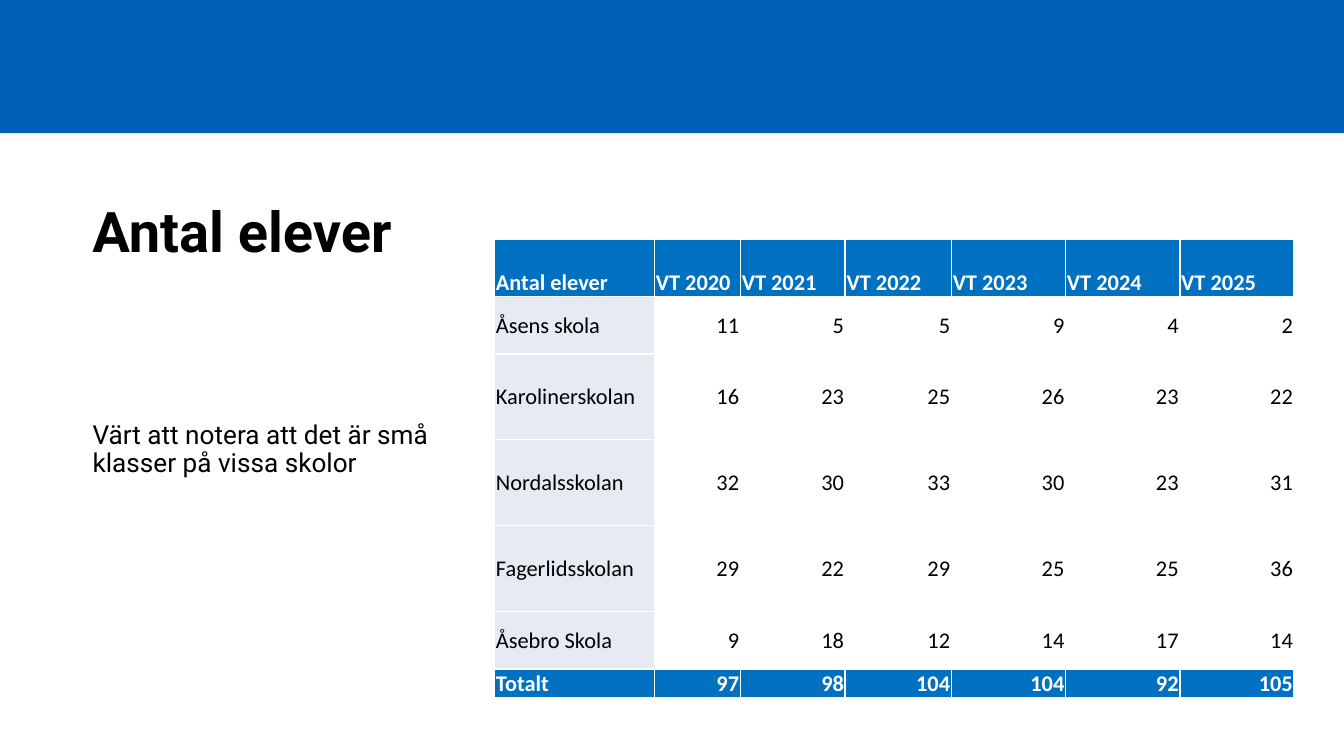
from dataclasses import dataclass

from lxml.etree import SubElement
from pptx import Presentation
from pptx.dml.color import RGBColor
from pptx.enum.shapes import MSO_SHAPE
from pptx.enum.text import MSO_ANCHOR as ANCHOR, PP_ALIGN as ALIGN
from pptx.oxml.ns import qn
from pptx.util import Inches, Pt


@dataclass(frozen=True)
class Theme:
    banner: str = "005EB8"
    header: str = "0070C0"
    school: str = "E7EAF3"
    white: str = "FFFFFF"
    black: str = "000000"
    text_font: str = "Roboto"
    table_font: str = "Calibri"
    title_size: int = 30
    body_size: int = 14
    table_size: int = 12


theme = Theme()


def style_font(font, name, size, color, bold):
    for key, value in {"name": name, "size": Pt(size), "bold": bold}.items():
        setattr(font, key, value)
    font.color.rgb = RGBColor.from_string(color)


def add_borders(cell, color):
    properties = cell._tc.get_or_add_tcPr()
    for side in ("a:lnL", "a:lnR", "a:lnT", "a:lnB"):
        line = SubElement(properties, qn(side), w=str(Pt(1)))
        fill = SubElement(line, qn("a:solidFill"))
        SubElement(fill, qn("a:srgbClr"), val=color)


presentation = Presentation()
presentation.slide_width = Inches(10)
presentation.slide_height = Inches(10) * 9 // 16
slide = presentation.slides.add_slide(presentation.slide_layouts[6])

banner = slide.shapes.add_shape(
    MSO_SHAPE.RECTANGLE, 0, 0, presentation.slide_width, Inches(0.99)
)
banner.shadow.inherit = False
banner.fill.solid()
banner.fill.fore_color.rgb = RGBColor.from_string(theme.banner)
banner.line.fill.background()

texts = [
    ("Antal elever", (0.59, 1.22, 8.06, 0.8), ANCHOR.BOTTOM, theme.title_size, True),
    ("Värt att notera att det är små klasser på vissa skolor",
     (0.59, 3.09, 3.02, 2.11), ANCHOR.TOP, theme.body_size, False),
]
for text, box, anchor, size, bold in texts:
    frame = slide.shapes.add_textbox(*map(Inches, box)).text_frame
    frame.word_wrap = True
    frame.vertical_anchor = anchor
    paragraph = frame.paragraphs[0]
    paragraph.text = text
    paragraph.line_spacing = 0.9
    style_font(paragraph.font, theme.text_font, size, theme.black, bold)

schools = [
    ["Åsens skola", 11, 5, 5, 9, 4, 2],
    ["Karolinerskolan", 16, 23, 25, 26, 23, 22],
    ["Nordalsskolan", 32, 30, 33, 30, 23, 31],
    ["Fagerlidsskolan", 29, 22, 29, 25, 25, 36],
    ["Åsebro Skola", 9, 18, 12, 14, 17, 14],
]
header = ["Antal elever"] + [f"VT {year}" for year in range(2020, 2026)]
totals = ["Totalt"] + [sum(counts) for counts in list(zip(*schools))[1:]]
rows = [header, *schools, totals]
column_widths = [1.19, 0.64, 0.78, 0.79, 0.85, 0.85, 0.85]
row_lines = [2, 2, 3, 3, 3, 2, 1]
table_height = Inches(3.41)

table = slide.shapes.add_table(
    len(rows), len(header), Inches(3.68), Inches(1.78), Inches(5.94), table_height
).table
table.first_row = False
table.horz_banding = False
for column, width in zip(table.columns, column_widths):
    column.width = Inches(width)
for row, lines in zip(table.rows, row_lines):
    row.height = table_height * lines // sum(row_lines)

cell_format = {
    "margin_left": Inches(0.01),
    "margin_right": Inches(0.01),
    "margin_top": Inches(0.01),
    "margin_bottom": 0,
}
for row_index, values in enumerate(rows):
    is_header = values is header
    is_total = values is totals
    emphasized = is_header or is_total
    for column_index, value in enumerate(values):
        is_label = column_index == 0
        cell = table.cell(row_index, column_index)
        for key, setting in cell_format.items():
            setattr(cell, key, setting)
        at_bottom = is_header or (is_total and not is_label)
        cell.vertical_anchor = ANCHOR.BOTTOM if at_bottom else ANCHOR.MIDDLE
        add_borders(cell, theme.white)
        if emphasized or is_label:
            cell.fill.solid()
            fill_color = theme.header if emphasized else theme.school
            cell.fill.fore_color.rgb = RGBColor.from_string(fill_color)
        else:
            cell.fill.background()
        paragraph = cell.text_frame.paragraphs[0]
        paragraph.text = str(value)
        paragraph.alignment = ALIGN.LEFT if is_header or is_label else ALIGN.RIGHT
        color = theme.white if emphasized else theme.black
        style_font(paragraph.font, theme.table_font, theme.table_size, color, emphasized)

presentation.save("out.pptx")
